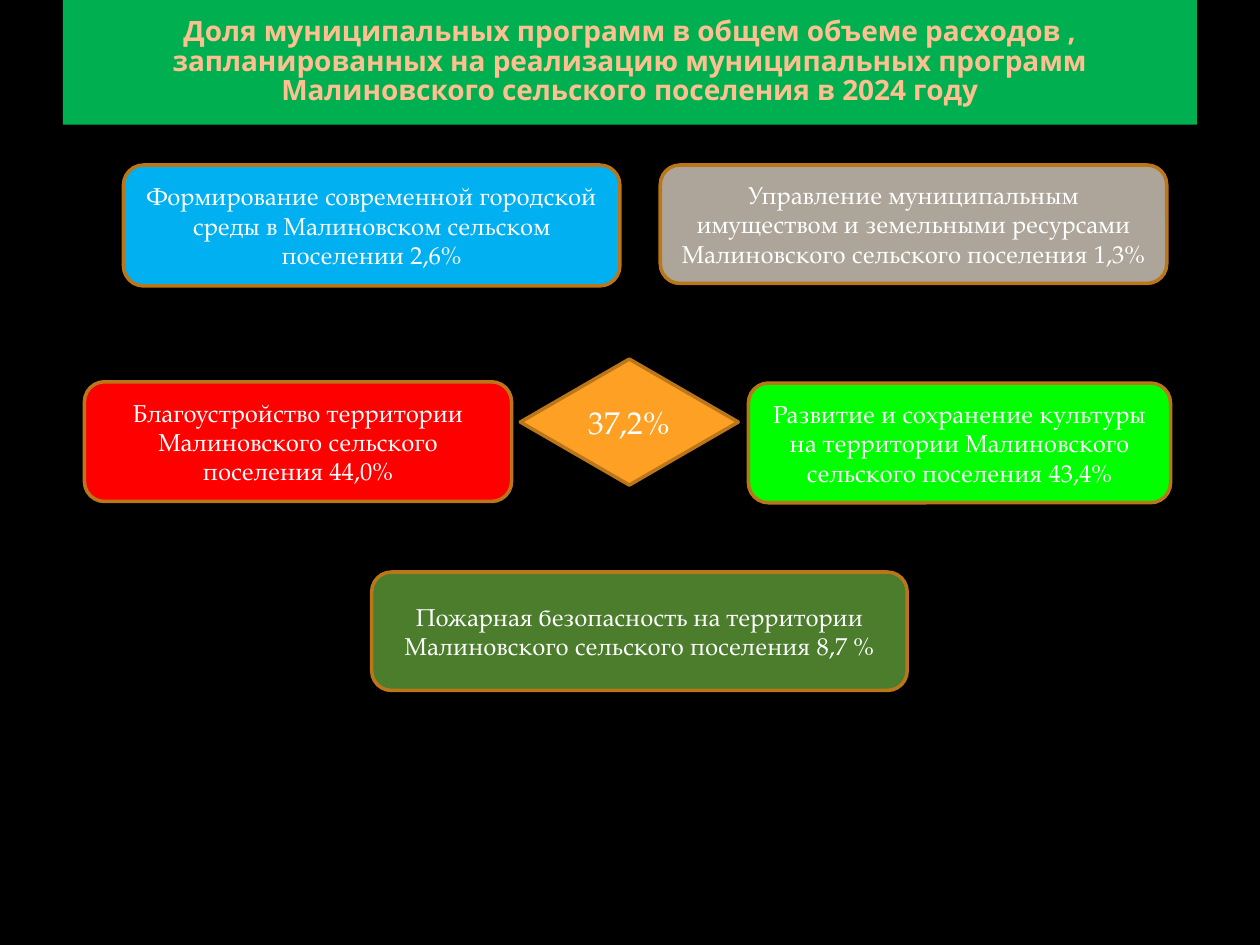
from pptx import Presentation
from pptx.dml.color import RGBColor
from pptx.enum.shapes import MSO_SHAPE
from pptx.enum.text import MSO_ANCHOR, PP_ALIGN
from pptx.util import Inches, Pt

RECT = MSO_SHAPE.RECTANGLE
ROUNDED = MSO_SHAPE.ROUNDED_RECTANGLE
DIAMOND = MSO_SHAPE.DIAMOND
MIDDLE = MSO_ANCHOR.MIDDLE
CENTER = PP_ALIGN.CENTER

COLUMNS, ROWS = 100, 75
HEADING_FONT, BODY_FONT = "Open Sans", "TeX Gyre Pagella"
OUTLINE = "BB761A"

HEADING = ("Доля муниципальных программ в общем объеме расходов , "
           "запланированных на реализацию муниципальных программ "
           "Малиновского сельского поселения в 2024 году")

# Column, row, columns wide, rows high; fill; wording
PROGRAMS = [
    ((9.8, 13.1, 39.4, 9.6), "00B0F0",
     "Формирование современной городской среды в Малиновском сельском поселении 2,6%"),
    ((52.4, 13.1, 40.2, 9.4), "ADA59A",
     "Управление муниципальным имуществом и земельными ресурсами "
     "Малиновского сельского поселения 1,3%"),
    ((6.7, 30.3, 33.9, 9.5), "FF0000",
     "Благоустройство территории Малиновского сельского поселения 44,0%"),
    ((59.4, 30.4, 33.5, 9.5), "00FF00",
     "Развитие и сохранение культуры на территории Малиновского "
     "сельского поселения 43,4%"),
    ((29.5, 45.4, 42.5, 9.4), "4B7D2C",
     "Пожарная безопасность на территории Малиновского сельского поселения 8,7 %"),
]


def color(hex_code):
    return RGBColor.from_string(hex_code)


def add_block(slide, kind, box, fill, wording, font_name, size, text_color):
    """Add a filled shape with centred text; box is in grid columns and rows."""
    column, row, width, height = box
    cell_width, cell_height = Inches(10) / COLUMNS, Inches(7.5) / ROWS
    block = slide.shapes.add_shape(
        kind, round(column * cell_width), round(row * cell_height),
        round(width * cell_width), round(height * cell_height))
    block.shadow.inherit = False
    block.fill.solid()
    block.fill.fore_color.rgb = color(fill)
    frame = block.text_frame
    frame.word_wrap = True
    frame.vertical_anchor = MIDDLE
    paragraph = frame.paragraphs[0]
    paragraph.text = wording
    paragraph.alignment = CENTER
    paragraph.font.name = font_name
    paragraph.font.size = Pt(size)
    paragraph.font.color.rgb = color(text_color)
    return block


def add_heading(slide, box):
    banner = add_block(slide, RECT, box, "00B050", HEADING, HEADING_FONT, 16, "FFC091")
    banner.line.fill.background()
    paragraph = banner.text_frame.paragraphs[0]
    paragraph.font.bold = True
    paragraph.line_spacing = 0.88


def add_share(slide, kind, box, fill, wording, size):
    share = add_block(slide, kind, box, fill, wording, BODY_FONT, size, "FFFFFF")
    share.line.color.rgb = color(OUTLINE)
    share.line.width = Pt(2)


def main():
    deck = Presentation()
    deck.slide_width, deck.slide_height = Inches(10), Inches(7.5)
    slide = deck.slides.add_slide(deck.slide_layouts[6])
    slide.background.fill.solid()
    slide.background.fill.fore_color.rgb = color("000000")

    add_heading(slide, (5, 0, 90, 9.9))
    for box, fill, wording in PROGRAMS:
        add_share(slide, ROUNDED, box, fill, wording, 14)
    add_share(slide, DIAMOND, (41.3, 28.5, 17.3, 10), "FDA023", "37,2%", 18)
    deck.save("out.pptx")


if __name__ == "__main__":
    main()
